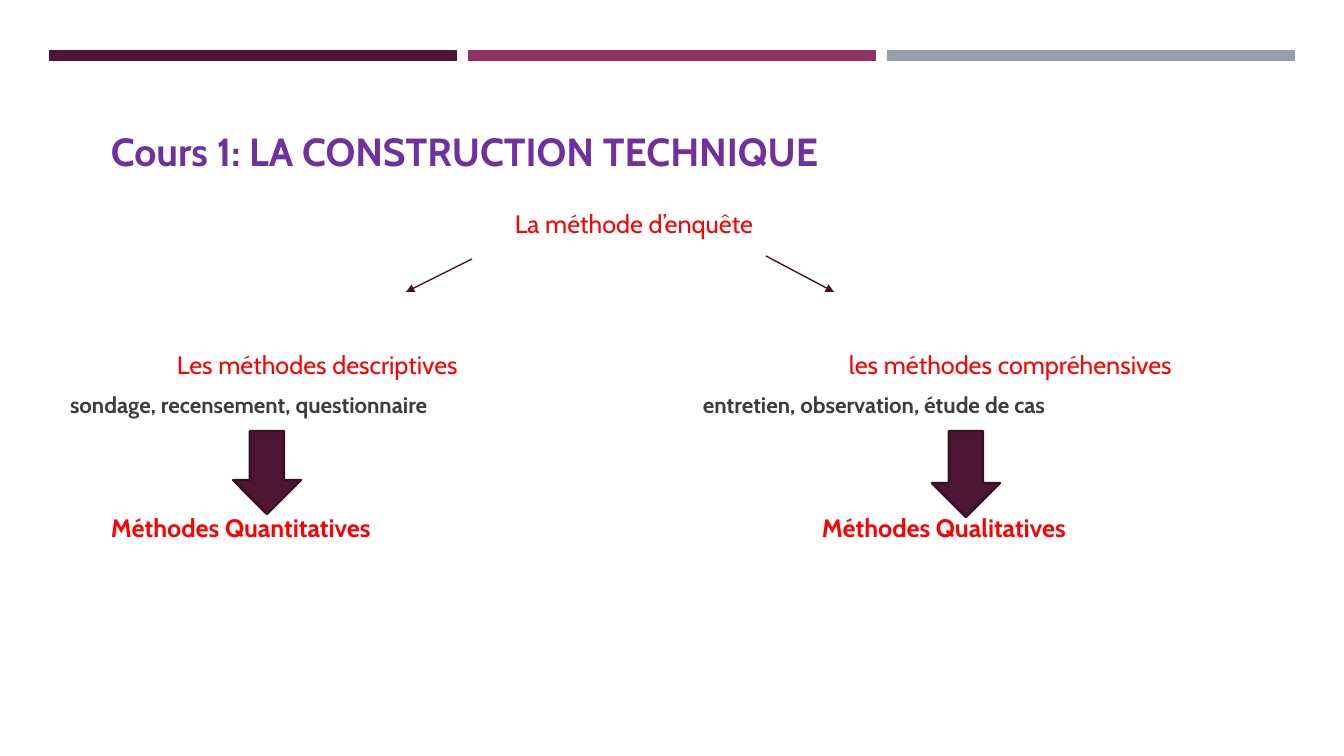
"""Build the slide on the technical construction of a survey method."""
import pptx
import pptx.util
import pptx.dml.color
import pptx.enum.shapes
import pptx.enum.text
import pptx.oxml.ns
import lxml.etree

RGBColor = pptx.dml.color.RGBColor
PLUM = RGBColor(0x4D, 0x14, 0x34)
MAGENTA = RGBColor(0x90, 0x31, 0x63)
GREY = RGBColor(0x96, 0x9F, 0xA7)
PURPLE = RGBColor(0x70, 0x30, 0xA0)
RED = RGBColor(0xFF, 0x00, 0x00)
DARK = RGBColor(0x3D, 0x3D, 0x3D)
LINE = RGBColor(0x45, 0x12, 0x2F)
EDGE = RGBColor(0x39, 0x0F, 0x26)
MSO_SHAPE = pptx.enum.shapes.MSO_SHAPE
PP_ALIGN = pptx.enum.text.PP_ALIGN


def px(n):
    return round(n * 914400 / 100.8)


def add_label(text, x, middle, w, size, color, bold, align=PP_ALIGN.LEFT):
    tb = s.shapes.add_textbox(px(x), px(middle - 20), px(w), px(40))
    tf = tb.text_frame
    tf.word_wrap = True
    tf.vertical_anchor = pptx.enum.text.MSO_ANCHOR.MIDDLE
    tf.margin_left = tf.margin_right = tf.margin_top = tf.margin_bottom = 0
    p = tf.paragraphs[0]
    p.text = text
    p.alignment = align
    p.font.name = "Cabin"
    p.font.size = pptx.util.Pt(size)
    p.font.bold = bold
    p.font.color.rgb = color


prs = pptx.Presentation()
prs.slide_width, prs.slide_height = px(1344), px(756)
s = prs.slides.add_slide(prs.slide_layouts[6])

for i, color in enumerate((PLUM, MAGENTA, GREY)):
    bar = s.shapes.add_shape(MSO_SHAPE.RECTANGLE, px(49 + 419 * i), px(50), px(408), px(11))
    bar.shadow.inherit = False
    bar.fill.solid()
    bar.fill.fore_color.rgb = color
    bar.line.fill.background()

for x1, y1, x2, y2 in ((472, 259, 406, 292), (766, 256, 834, 292)):
    cn = s.shapes.add_connector(pptx.enum.shapes.MSO_CONNECTOR.STRAIGHT, px(x1), px(y1), px(x2), px(y2))
    cn.line.color.rgb = LINE
    cn.line.width = pptx.util.Pt(1)
    ln = cn.line._get_or_add_ln()
    lxml.etree.SubElement(ln, pptx.oxml.ns.qn("a:tailEnd"), type="triangle")
    lxml.etree.SubElement(cn._element.spPr, pptx.oxml.ns.qn("a:effectLst"))

for x, h in ((233, 83), (932, 86)):
    arrow = s.shapes.add_shape(MSO_SHAPE.DOWN_ARROW, px(x), px(431), px(68), px(h))
    arrow.shadow.inherit = False
    arrow.fill.solid()
    arrow.fill.fore_color.rgb = PLUM
    arrow.line.color.rgb = EDGE
    arrow.line.width = pptx.util.Pt(1.75)

add_label("Cours 1: LA CONSTRUCTION TECHNIQUE", 111, 151, 1122, 28, PURPLE, True)
add_label("La méthode d’enquête", 301, 223, 666, 18, RED, False, PP_ALIGN.CENTER)

branches = (
    (("Les méthodes descriptives", 177), ("sondage, recensement, questionnaire", 70),
     ("Méthodes Quantitatives", 111)),
    (("les méthodes compréhensives", 849), ("entretien, observation, étude de cas", 703),
     ("Méthodes Qualitatives", 822)),
)
rows = ((364, 18, RED, False), (405, 16, DARK, True), (527, 18, RED, True))
for branch in branches:
    for (text, x), (middle, size, color, bold) in zip(branch, rows):
        add_label(text, x, middle, 420, size, color, bold)

prs.save("out.pptx")
